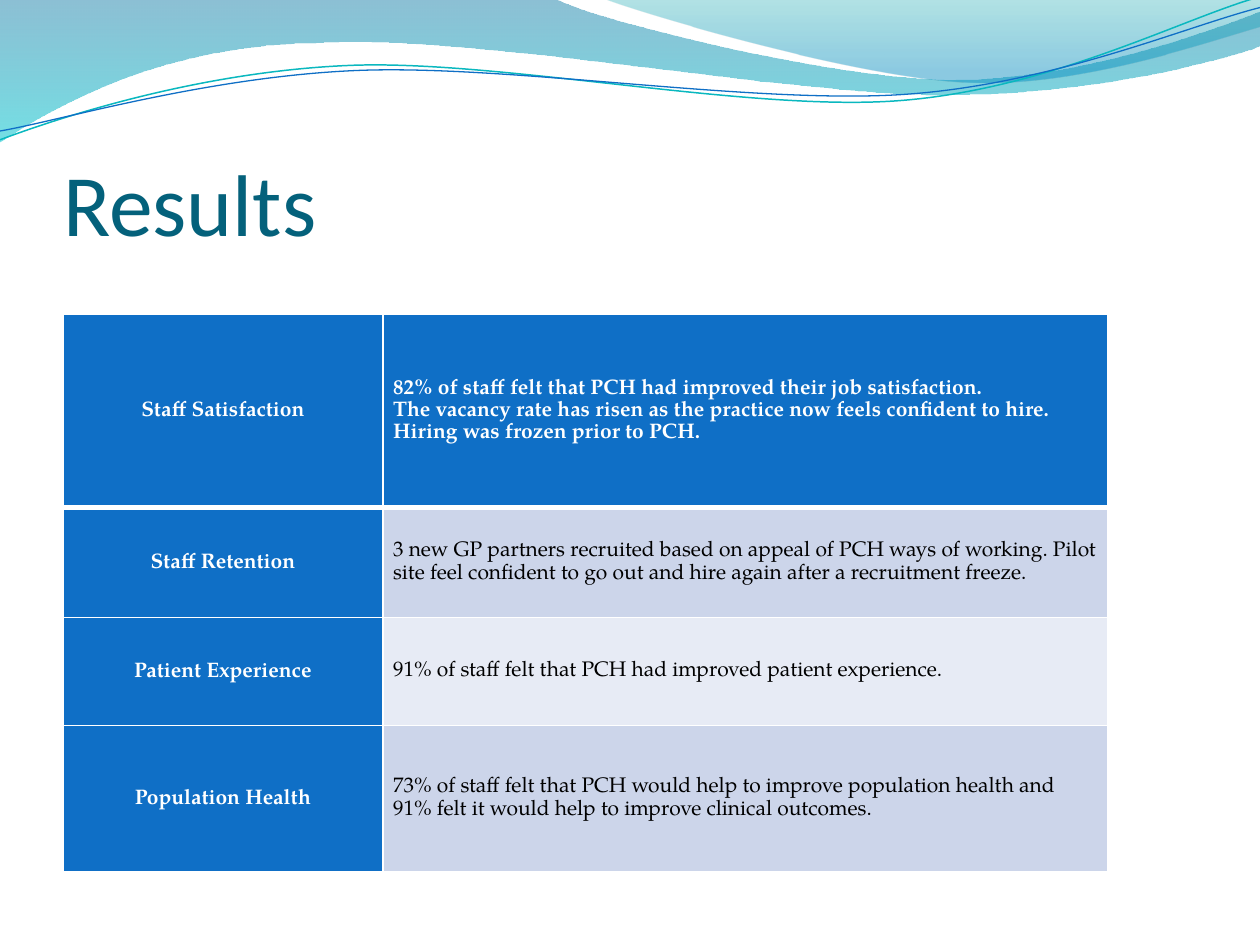
from lxml import etree
from pptx import Presentation
from pptx.dml.color import RGBColor
from pptx.enum.text import MSO_ANCHOR, PP_ALIGN
from pptx.oxml.ns import qn
from pptx.util import Inches, Pt

MIDDLE, BOTTOM = MSO_ANCHOR.MIDDLE, MSO_ANCHOR.BOTTOM
LEFT, CENTER = PP_ALIGN.LEFT, PP_ALIGN.CENTER
TITLE_ONLY = 5
UNITS_PER_INCH = 10000
TITLE_FONT, BODY_FONT = "Calibri", "TeX Gyre Pagella"

COLORS = {
    "title": "04617B", "blue": "0F6FC6", "teal": "0AB8BF",
    "band_dark": "CCD5EA", "band_light": "E7EBF5",
    "white": "FFFFFF", "black": "000000",
    "wave_top": "0074A1", "wave_bottom": "00C6CF",
    "crest_top": "00A1A9", "crest_bottom": "008BBF",
}

WAVE = [
    (0, -0.01), (4.4, -0.01),
    (4.76, 0.17, 6.64, 0.63, 7.58, 0.63), (8.53, 0.63, 9.58, 0.26, 10, 0.09),
    (10.01, 0.36),
    (9.83, 0.44, 8.7, 0.76, 7.46, 0.75), (6.22, 0.75, 3.82, 0.28, 2.57, 0.34),
    (1.29, 0.35, 0.46, 0.83, -0.01, 1.13), (0, -0.01),
]
CREST = [
    (4.79, -0.01),
    (5.09, 0.11, 6.82, 0.62, 7.69, 0.65), (8.56, 0.69, 9.61, 0.32, 10, 0.21),
    (10, 0), (4.79, -0.01),
]
TEAL_LINE = [
    (0, 1.11), (0.48, 0.93, 1.58, 0.57, 2.77, 0.52),
    (3.95, 0.47, 5.93, 0.89, 7.13, 0.8), (8.33, 0.71, 9.38, 0.15, 9.98, -0.02),
]
BLUE_LINE = [
    (0, 1.04), (0.47, 0.96, 1.64, 0.61, 2.83, 0.56),
    (4.03, 0.51, 5.97, 0.83, 7.17, 0.75), (8.36, 0.67, 9.41, 0.21, 10, 0.06),
]

COLUMN_WIDTHS = (2.54, 5.75)
ROWS = [
    (1.54, "blue", "Staff Satisfaction", [
        "82% of staff felt that PCH had improved their job satisfaction.",
        "The vacancy rate has risen as the practice now feels confident to hire. "
        "Hiring was frozen prior to PCH."]),
    (0.87, "band_dark", "Staff Retention", [
        "3 new GP partners recruited based on appeal of PCH ways of working. "
        "Pilot site feel confident to go out and hire again after a recruitment freeze."]),
    (0.86, "band_light", "Patient Experience", [
        "91% of staff felt that PCH had improved patient experience."]),
    (1.16, "band_dark", "Population Health", [
        "73% of staff felt that PCH would help to improve population health and "
        "91% felt it would help to improve clinical outcomes."]),
]


def color(name):
    return RGBColor.from_string(COLORS[name])


def bend_segments(shape, segments):
    nodes = iter(list(shape.element.iter(qn("a:lnTo"))))
    for segment in segments:
        node = next(nodes)
        if len(segment) == 2:
            continue
        curve = etree.Element(qn("a:cubicBezTo"))
        node.addprevious(curve)
        for control in (node, next(nodes), next(nodes)):
            curve.append(control[0])
            control.getparent().remove(control)


def add_outline(page, segments, closed):
    points = [(round(x * UNITS_PER_INCH), round(y * UNITS_PER_INCH))
              for segment in segments
              for x, y in zip(segment[::2], segment[1::2])]
    builder = page.shapes.build_freeform(*points[0], scale=Inches(1) / UNITS_PER_INCH)
    builder.add_line_segments(points[1:], close=closed)
    shape = builder.convert_to_shape()
    bend_segments(shape, segments[1:])
    shape.shadow.inherit = False
    return shape


def add_wave(page, segments, stops):
    shape = add_outline(page, segments, True)
    shape.line.fill.background()
    shape.fill.gradient()
    shape.fill.gradient_angle = 270
    for stop, (position, name, _) in zip(shape.fill.gradient_stops, stops):
        stop.position = position
        stop.color.rgb = color(name)
    for node, (_, _, opacity) in zip(shape.element.iter(qn("a:srgbClr")), stops):
        etree.SubElement(node, qn("a:alpha"), val=str(opacity * 1000))


def add_wave_line(page, segments, name, width):
    shape = add_outline(page, segments, False)
    shape.fill.background()
    shape.line.color.rgb = color(name)
    shape.line.width = Pt(width)


def set_title(page, text):
    title = page.shapes.title
    title.left, title.top = Inches(0.5), Inches(0.77)
    title.width, title.height = Inches(9), Inches(1.25)
    frame = title.text_frame
    frame.text = text
    frame.vertical_anchor = BOTTOM
    frame.margin_left = frame.margin_right = frame.margin_bottom = 0
    frame.margin_top = Inches(0.05)
    para = frame.paragraphs[0]
    para.alignment = LEFT
    para.font.name, para.font.size = TITLE_FONT, Pt(50)
    para.font.color.rgb = color("title")


def set_borders(cell, top, bottom):
    properties = cell._tc.get_or_add_tcPr()
    for side, width in (("L", 1), ("R", 1), ("T", top), ("B", bottom)):
        line = etree.SubElement(properties, qn(f"a:ln{side}"), w=str(Pt(width)))
        fill = etree.SubElement(line, qn("a:solidFill"))
        etree.SubElement(fill, qn("a:srgbClr"), val=COLORS["white"])


def fill_cell(cell, lines, fill, alignment, bold):
    cell.fill.solid()
    cell.fill.fore_color.rgb = color(fill)
    cell.vertical_anchor = MIDDLE
    cell.margin_left = cell.margin_right = Inches(0.08)
    cell.margin_top = cell.margin_bottom = 0
    cell.text = "\n".join(lines)
    for para in cell.text_frame.paragraphs:
        para.alignment = alignment
        para.line_spacing = 1.07
        para.font.name, para.font.size = BODY_FONT, Pt(12)
        para.font.bold = bold
        para.font.color.rgb = color("white" if bold else "black")


def add_results_table(page):
    height = sum(row[0] for row in ROWS)
    table = page.shapes.add_table(
        len(ROWS), len(COLUMN_WIDTHS), Inches(0.5), Inches(2.49),
        Inches(sum(COLUMN_WIDTHS)), Inches(height)).table
    table.first_col = True
    for column, width in zip(table.columns, COLUMN_WIDTHS):
        column.width = Inches(width)
    for index, (height, fill, label, findings) in enumerate(ROWS):
        row = table.rows[index]
        row.height = Inches(height)
        for cell in row.cells:
            set_borders(cell, 3 if index == 1 else 1, 3 if index == 0 else 1)
        fill_cell(row.cells[0], [label], "blue", CENTER, True)
        fill_cell(row.cells[1], findings, fill, LEFT, index == 0)


def main():
    deck = Presentation()
    deck.slide_width, deck.slide_height = Inches(10), Inches(7.5)
    page = deck.slides.add_slide(deck.slide_layouts[TITLE_ONLY])
    add_wave(page, WAVE, [(0, "wave_top", 45), (1, "wave_bottom", 55)])
    add_wave(page, CREST, [(0, "crest_top", 30), (0.8, "crest_bottom", 45)])
    add_wave_line(page, TEAL_LINE, "teal", 0.85)
    add_wave_line(page, BLUE_LINE, "blue", 0.75)
    set_title(page, "Results")
    add_results_table(page)
    deck.save("out.pptx")


if __name__ == "__main__":
    main()
